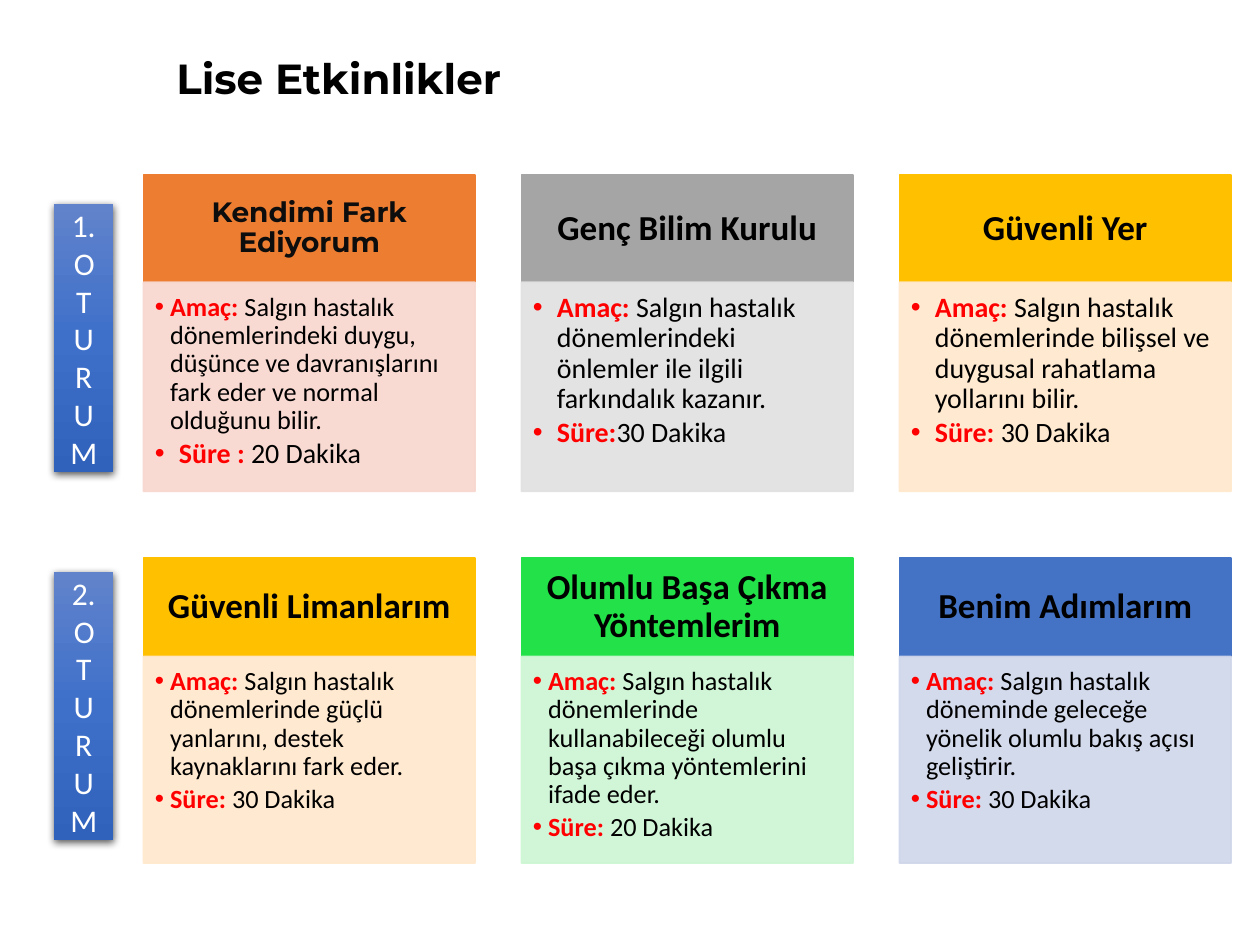
import pptx
import pptx.dml.color
import pptx.enum.shapes
import pptx.enum.text
import pptx.oxml
import pptx.oxml.ns
import pptx.util
from lxml import etree

Inches = pptx.util.Inches
Pt = pptx.util.Pt
Align = pptx.enum.text.PP_ALIGN
Anchor = pptx.enum.text.MSO_ANCHOR
qn = pptx.oxml.ns.qn

RED = "FF0000"
BLACK = "000000"
CARD_LEFT, CARD_WIDTH, CARD_STEP = 1.14, 2.63, 3


def color(value):
    return pptx.dml.color.RGBColor.from_string(value)


def add_child(parent, tag, **attributes):
    return etree.SubElement(parent, qn(tag), {name: str(value) for name, value in attributes.items()})


def write(paragraph, text, font="Calibri", size=16, text_color=BLACK, bold=False):
    run = paragraph.add_run()
    run.text = text
    run.font.name = font
    run.font.size = Pt(size)
    run.font.bold = bold
    run.font.color.rgb = color(text_color)


class SlideBuilder:
    def __init__(self, presentation):
        self.slide = presentation.slides.add_slide(presentation.slide_layouts[5])

    def title(self, text, left, top, width, height):
        shape = self.slide.shapes.title
        shape.left, shape.top = Inches(left), Inches(top)
        shape.width, shape.height = Inches(width), Inches(height)
        shape.text_frame.vertical_anchor = Anchor.MIDDLE
        paragraph = shape.text_frame.paragraphs[0]
        paragraph.alignment = Align.LEFT
        paragraph.line_spacing = 0.9
        write(paragraph, text, font="Montserrat", size=24, bold=True)

    def rectangle(self, left, top, width, height, margins, anchor):
        shape = self.slide.shapes.add_shape(
            pptx.enum.shapes.MSO_SHAPE.RECTANGLE,
            Inches(left), Inches(top), Inches(width), Inches(height))
        shape.shadow.inherit = False
        frame = shape.text_frame
        frame.word_wrap = True
        frame.vertical_anchor = anchor
        frame.margin_left, frame.margin_top, frame.margin_right, frame.margin_bottom = map(Inches, margins)
        return shape

    def paint(self, shape, fill, opacity=100):
        shape.fill.solid()
        shape.fill.fore_color.rgb = color(fill)
        shape.line.color.rgb = color(fill)
        shape.line.width = Pt(1)
        if opacity < 100:
            for element in list(shape._element.spPr.iter(qn("a:srgbClr"))):
                add_child(element, "a:alpha", val=opacity * 1000)

    def header(self, text, left, top, height, fill, **style):
        shape = self.rectangle(left, top, CARD_WIDTH, height, (0.16, 0.09, 0.16, 0.09), Anchor.MIDDLE)
        self.paint(shape, fill)
        paragraph = shape.text_frame.paragraphs[0]
        paragraph.alignment = Align.CENTER
        paragraph.line_spacing = 0.9
        write(paragraph, text, **{"size": 20, "bold": True, **style})

    def body(self, items, left, top, height, fill):
        shape = self.rectangle(left, top, CARD_WIDTH, height, (0.09, 0.09, 0.12, 0.13), Anchor.TOP)
        self.paint(shape, fill, opacity=90)
        frame = shape.text_frame
        for index, (label, text, size) in enumerate(items):
            paragraph = frame.add_paragraph() if index else frame.paragraphs[0]
            self.bullet(paragraph, 0.12 if size == 15 else 0.19)
            paragraph.level = 1
            paragraph.alignment = Align.LEFT
            paragraph.line_spacing = 0.9
            paragraph.space_after = Pt(2.5)
            write(paragraph, label, size=size, text_color=RED, bold=True)
            write(paragraph, text, size=size)

    def bullet(self, paragraph, indent):
        properties = paragraph._p.get_or_add_pPr()
        properties.set("marL", str(Inches(indent)))
        properties.set("indent", str(-Inches(indent)))
        add_child(properties, "a:buFont", typeface="Arial")
        add_child(properties, "a:buChar", char="•")

    def session(self, text, top):
        shape = self.rectangle(0.43, top, 0.47, 2.13, (0.1, 0.05, 0.1, 0.05), Anchor.MIDDLE)
        shape.line.fill.background()
        shape.fill.gradient()
        shape.fill.gradient_angle = 270
        properties = shape._element.spPr
        stops = properties.find(".//" + qn("a:gsLst"))
        for stop in list(stops):
            stops.remove(stop)
        for position, value in ((0, "6183CB"), (50, "3E70CA"), (100, "3062BB")):
            add_child(add_child(stops, "a:gs", pos=position * 1000), "a:srgbClr", val=value)
        shadow = add_child(properties.find(qn("a:effectLst")), "a:outerShdw",
                           blurRad=int(Pt(4.5)), dist=int(Pt(1.5)), dir=5400000, algn="ctr", rotWithShape=0)
        add_child(add_child(shadow, "a:srgbClr", val=BLACK), "a:alpha", val=63000)
        paragraph = shape.text_frame.paragraphs[0]
        paragraph.alignment = Align.CENTER
        write(paragraph, text, size=18, text_color="FFFFFF")


FIRST_HEADER = {"font": "Montserrat", "size": 16, "text_color": "0D0D0D"}

ROWS = [
    ("1. OTURUM", 1.62, 1.39, 0.85, 1.66, [
        ("Kendimi Fark Ediyorum", "ED7D31", "F8D7CE", 15,
         "Salgın hastalık dönemlerindeki duygu, düşünce ve davranışlarını fark eder ve normal olduğunu bilir.",
         "Süre : ", "20 Dakika", 16, FIRST_HEADER),
        ("Genç Bilim Kurulu", "A5A5A5", "E1E1E1", 16,
         "Salgın hastalık dönemlerindeki önlemler ile ilgili farkındalık kazanır.",
         "Süre:", "30 Dakika", 16, {}),
        ("Güvenli Yer", "FFC000", "FFE8CC", 16,
         "Salgın hastalık dönemlerinde bilişsel ve duygusal rahatlama yollarını bilir.",
         "Süre: ", "30 Dakika", 16, {}),
    ]),
    ("2. OTURUM", 4.54, 4.43, 0.78, 1.64, [
        ("Güvenli Limanlarım", "FFC000", "FFE8CC", 15,
         "Salgın hastalık dönemlerinde güçlü yanlarını, destek kaynaklarını fark eder.",
         "Süre: ", "30 Dakika", 15, {}),
        ("Olumlu Başa Çıkma Yöntemlerim", "23E148", "CCF6D3", 15,
         "Salgın hastalık dönemlerinde kullanabileceği olumlu başa çıkma yöntemlerini ifade eder.",
         "Süre: ", "20 Dakika", 15, {}),
        ("Benim Adımlarım", "4472C4", "CFD6EA", 15,
         "Salgın hastalık döneminde geleceğe yönelik olumlu bakış açısı geliştirir.",
         "Süre: ", "30 Dakika", 15, {}),
    ]),
]


def main():
    presentation = pptx.Presentation()
    presentation.slide_width = Inches(10)
    presentation.slide_height = Inches(7.5)
    builder = SlideBuilder(presentation)
    builder.title("Lise Etkinlikler", 1.3, 0.13, 6.54, 1.02)
    for session, session_top, top, header_height, body_height, cards in ROWS:
        for column, card in enumerate(cards):
            name, strong, pale, goal_size, goal, label, duration, duration_size, style = card
            left = CARD_LEFT + column * CARD_STEP
            builder.header(name, left, top, header_height, strong, **style)
            items = [("Amaç: ", goal, goal_size), (label, duration, duration_size)]
            builder.body(items, left, top + header_height, body_height, pale)
        builder.session(session, session_top)
    presentation.save("out.pptx")


if __name__ == "__main__":
    main()
